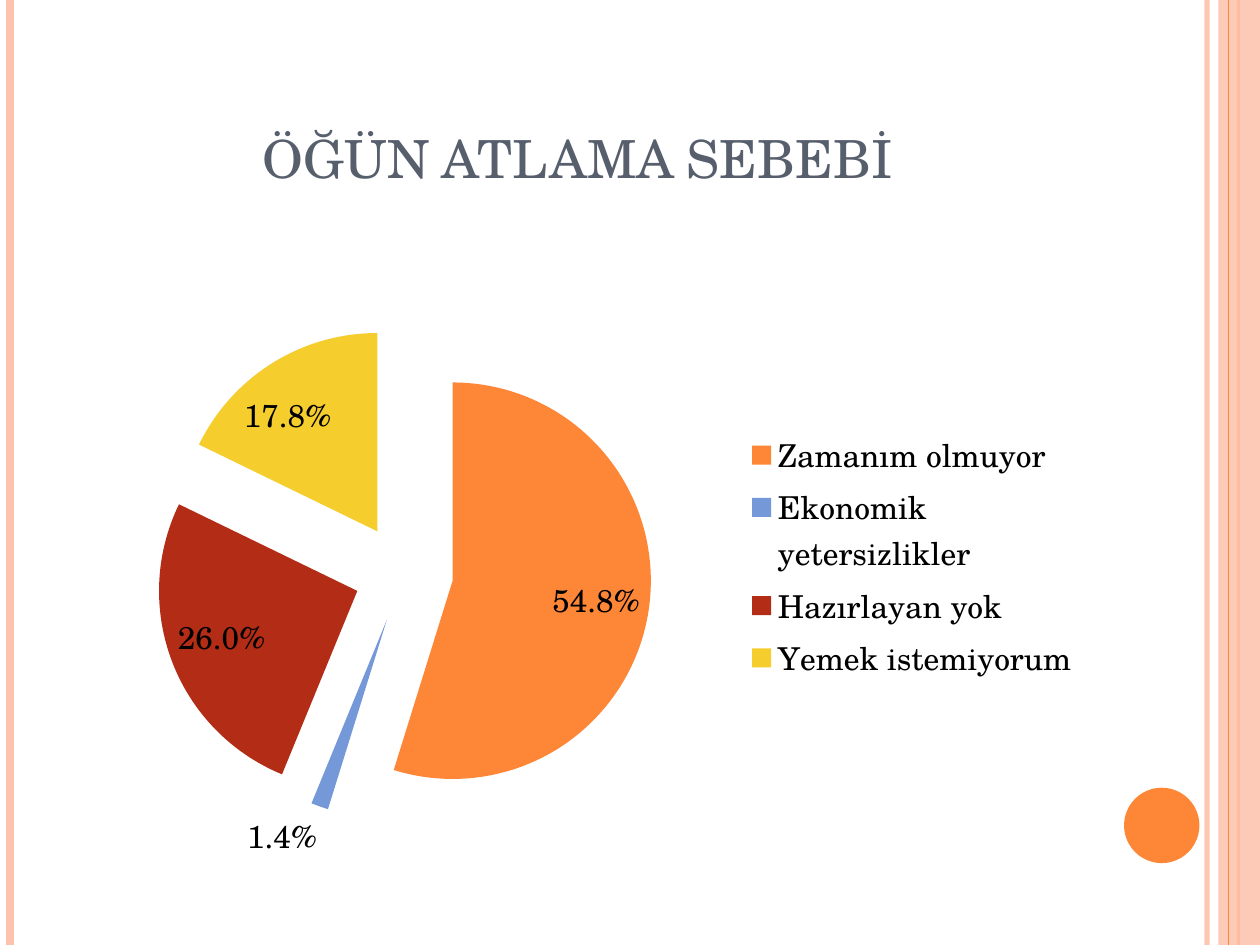
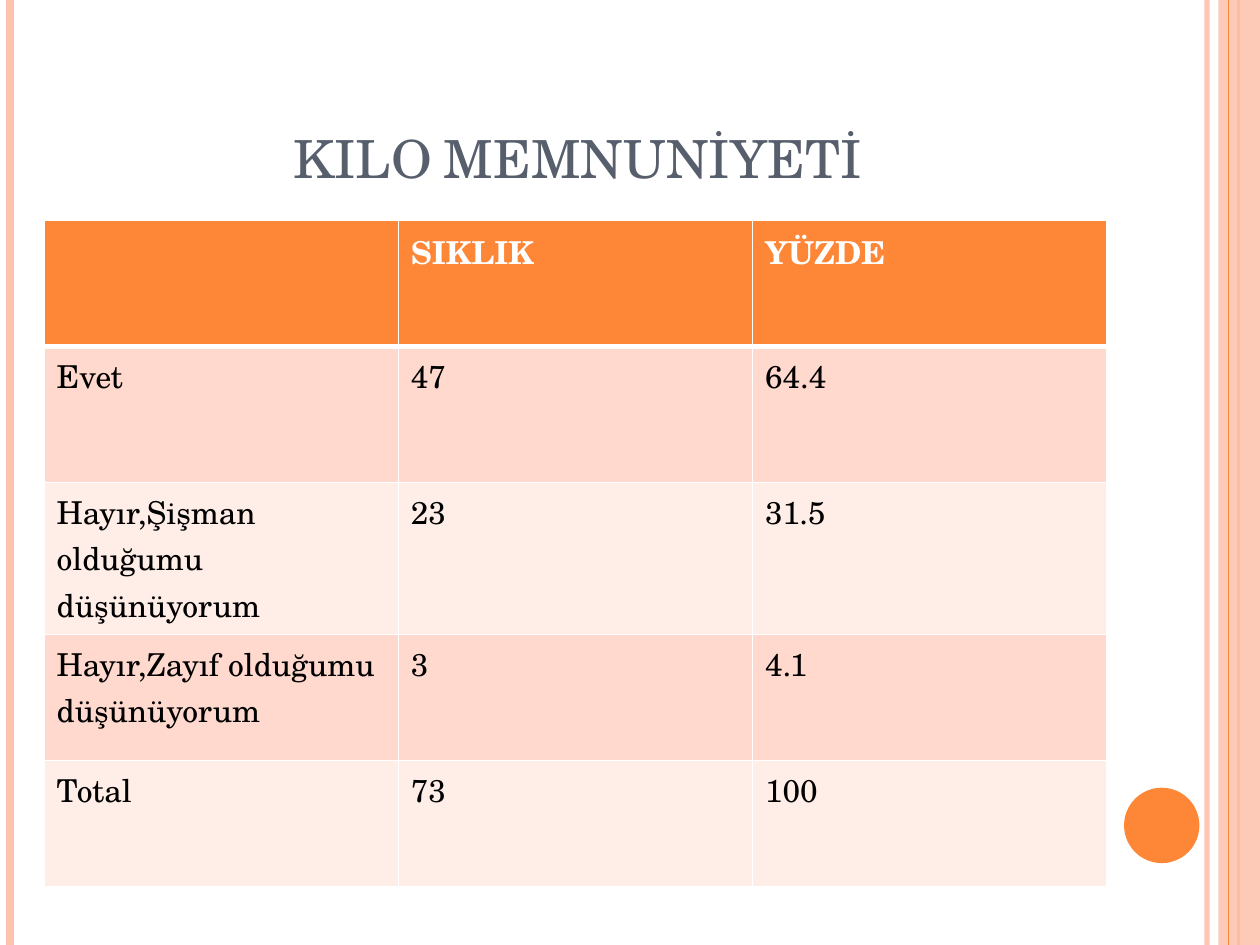
from dataclasses import dataclass

from lxml import etree
from pptx import Presentation
from pptx import util as u
from pptx.chart.data import CategoryChartData
from pptx.dml.color import RGBColor
from pptx.enum import chart as ch, shapes, text
from pptx.oxml import parse_xml
from pptx.oxml.ns import nsdecls, qn


@dataclass(frozen=True)
class Theme:
    font: str = "TeX Gyre Schola"
    title_size: int = 30
    body_size: int = 18
    title: RGBColor = RGBColor.from_string("575F6D")
    body: RGBColor = RGBColor.from_string("000000")
    white: RGBColor = RGBColor.from_string("FFFFFF")
    accent: RGBColor = RGBColor.from_string("FE8637")
    pink: RGBColor = RGBColor.from_string("FEC3AE")
    blue: RGBColor = RGBColor.from_string("7598D9")
    red: RGBColor = RGBColor.from_string("B32C16")
    yellow: RGBColor = RGBColor.from_string("F5CD2D")
    band_dark: RGBColor = RGBColor.from_string("FFD9CE")
    band_light: RGBColor = RGBColor.from_string("FFEDE8")


T = Theme()


def style_font(font, size, color, bold=False):
    font.name, font.size, font.bold = T.font, u.Pt(size), bold
    font.color.rgb = color


def set_opacity(shape, percent):
    """Make the first solid colour of the shape partly transparent."""
    color = next(shape._element.spPr.iter(qn("a:srgbClr")))
    etree.SubElement(color, qn("a:alpha")).set("val", str(percent * 1000))


prs = Presentation()
prs.slide_width, prs.slide_height = u.Cm(25.4), u.Cm(19.05)
H = prs.slide_height

# Shared frame: side stripes, right band, corner disc and title
# Stripes: x in cm, colour, width in points, opacity
stripes_under = [(24.33, T.pink, 3, 93), (0.2, T.pink, 4.5, 100), (24.97, T.accent, 1.5, 100)]
stripes_over = [(24.77, T.accent, 0.75, 100)]
slides = []
for title in ["ÖĞÜN ATLAMA SEBEBİ", "KILO MEMNUNİYETİ"]:
    s = prs.slides.add_slide(prs.slide_layouts[6])
    slides.append(s)
    for stripes in (stripes_under, stripes_over):
        if stripes is stripes_over:
            band = s.shapes.add_shape(shapes.MSO_SHAPE.RECTANGLE, u.Cm(24.56), 0, u.Cm(0.84), H)
            band.shadow.inherit = False
            band.fill.solid()
            band.fill.fore_color.rgb = T.pink
            band.line.fill.background()
            set_opacity(band, 87)
        for x, color, width, opacity in stripes:
            ln = s.shapes.add_connector(shapes.MSO_CONNECTOR.STRAIGHT, u.Cm(x), 0, u.Cm(x), H)
            ln.line.color.rgb = color
            ln.line.width = u.Pt(width)
            if opacity < 100:
                set_opacity(ln, opacity)
            etree.SubElement(ln._element.spPr, qn("a:effectLst"))

    disc = s.shapes.add_shape(shapes.MSO_SHAPE.OVAL, u.Cm(22.66), u.Cm(15.88), u.Cm(1.52), u.Cm(1.52))
    disc.shadow.inherit = False
    disc.fill.solid()
    disc.fill.fore_color.rgb = T.accent
    disc.line.fill.background()

    tf = s.shapes.add_textbox(u.Cm(1.27), u.Cm(0.76), u.Cm(20.75), u.Cm(3.18)).text_frame
    tf.word_wrap = True
    tf.vertical_anchor = text.MSO_ANCHOR.BOTTOM
    tf.text = title
    p = tf.paragraphs[0]
    p.alignment = text.PP_ALIGN.CENTER
    style_font(p.runs[0].font, T.title_size, T.title)
    p.runs[0]._r.get_or_add_rPr().set("cap", "small")

reason_slide, weight_slide = slides

# Reasons for skipping meals
reasons = [
    ("Zamanım olmuyor", 54.8, T.accent),
    ("Ekonomik yetersizlikler", 1.4, T.blue),
    ("Hazırlayan yok", 26, T.red),
    ("Yemek istemiyorum", 17.8, T.yellow),
]
data = CategoryChartData()
data.categories = [name for name, _, _ in reasons]
data.add_series("Series 1", [share for _, share, _ in reasons])
chart = reason_slide.shapes.add_chart(
    ch.XL_CHART_TYPE.PIE, u.Cm(1.27), u.Cm(4.45), u.Cm(20.75), u.Cm(13.54), data).chart
style_font(chart.font, T.body_size, T.body)
chart.has_title = False
chart.has_legend = True
chart.legend.position = ch.XL_LEGEND_POSITION.RIGHT
chart.legend.include_in_layout = False

plot = chart.plots[0]
plot.vary_by_categories = True
pie = plot.series[0]
pie._element.find(qn("c:tx")).addnext(parse_xml(f'<c:explosion {nsdecls("c")} val="25"/>'))
for i, (_, _, color) in enumerate(reasons):
    fill = pie.points[i].format.fill
    fill.solid()
    fill.fore_color.rgb = color
labels = pie.data_labels
labels.show_percentage, labels.show_value = True, False
labels.number_format, labels.number_format_is_linked = "0.0%", False
labels.position = ch.XL_LABEL_POSITION.BEST_FIT

area = chart._chartSpace.chart.plotArea
for old_layout in area.findall(qn("c:layout")):
    area.remove(old_layout)
area.insert(0, parse_xml(
    f'<c:layout {nsdecls("c")}><c:manualLayout><c:layoutTarget val="inner"/>'
    '<c:xMode val="edge"/><c:yMode val="edge"/><c:x val="0.09"/><c:y val="0.156"/>'
    '<c:w val="0.482"/><c:h val="0.738"/></c:manualLayout></c:layout>'))

# Satisfaction with weight
rows = [
    ("", "SIKLIK", "YÜZDE"),
    ("Evet", "47", "64.4"),
    ("Hayır,Şişman olduğumu düşünüyorum", "23", "31.5"),
    ("Hayır,Zayıf olduğumu düşünüyorum", "3", "4.1"),
    ("Total", "73", "100"),
]
row_heights = [2.54, 2.74, 3.06, 2.54, 2.54]  # the third row holds three lines
table = weight_slide.shapes.add_table(
    len(rows), 3, u.Cm(0.89), u.Cm(4.45), u.Cm(21.42), u.Cm(sum(row_heights))).table
for col in table.columns:
    col.width = u.Cm(7.14)
for r, values in enumerate(rows):
    table.rows[r].height = u.Cm(row_heights[r])
    header = r == 0
    for c, value in enumerate(values):
        cell = table.cell(r, c)
        tcPr = cell._tc.get_or_add_tcPr()
        for side in "LRTB":
            thick = (r, side) in [(0, "B"), (1, "T")]
            tcPr.append(parse_xml(
                f'<a:ln{side} {nsdecls("a")} w="{u.Pt(3 if thick else 1)}"><a:solidFill>'
                f'<a:srgbClr val="{T.white}"/></a:solidFill></a:ln{side}>'))
        cell.fill.solid()
        cell.fill.fore_color.rgb = T.accent if header else T.band_dark if r % 2 else T.band_light
        cell.text_frame.text = value
        for run in cell.text_frame.paragraphs[0].runs:
            style_font(run.font, T.body_size, T.white if header else T.body, header)

prs.save("out.pptx")
